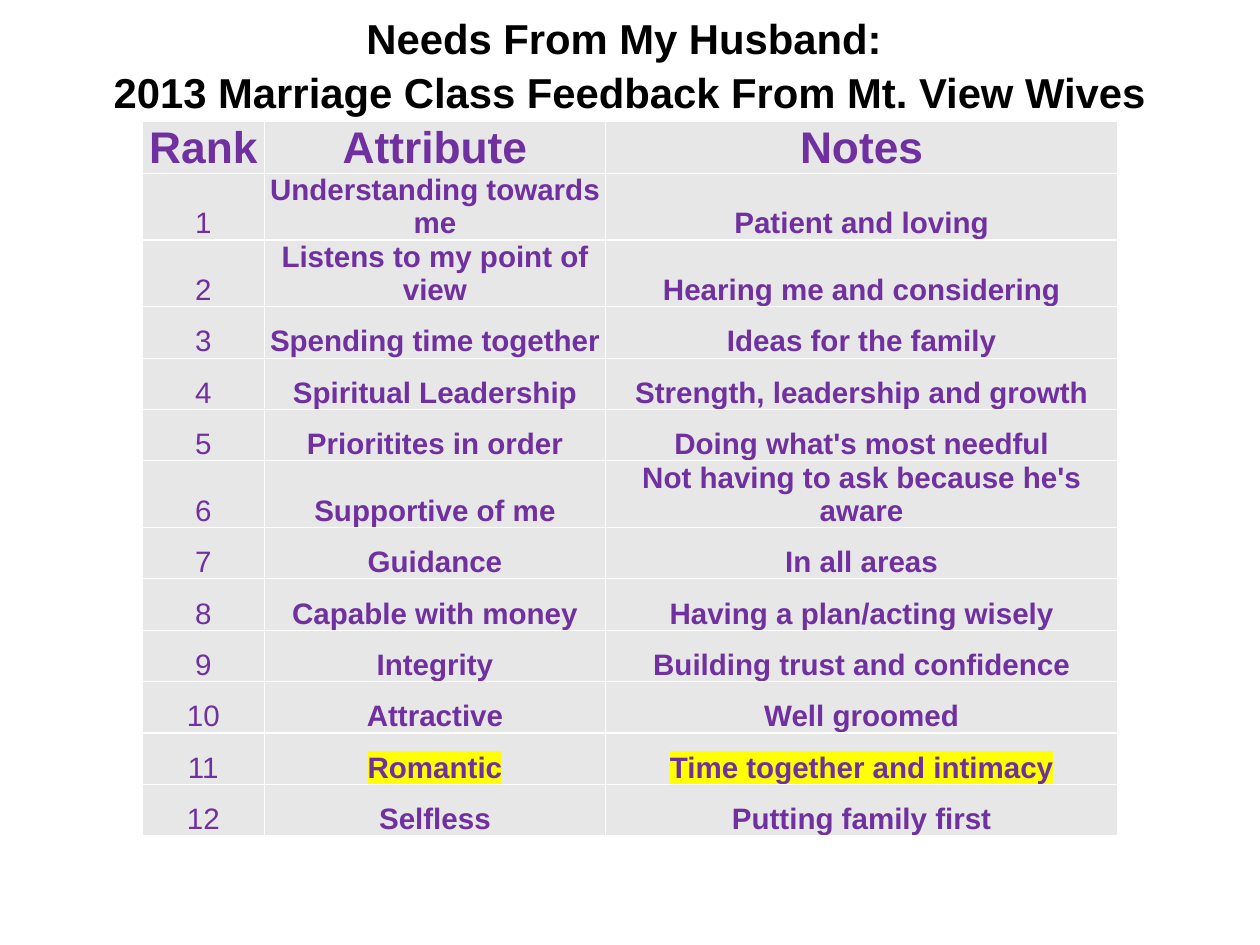
from dataclasses import dataclass

from lxml import etree
from pptx import Presentation
from pptx.dml.color import RGBColor
from pptx.enum.text import MSO_ANCHOR, PP_ALIGN
from pptx.oxml.ns import qn
from pptx.util import Inches, Pt

CENTER = PP_ALIGN.CENTER
MIDDLE = MSO_ANCHOR.MIDDLE
BOTTOM = MSO_ANCHOR.BOTTOM


@dataclass(frozen=True)
class Theme:
    font: str = "Arial"
    title_color: str = "000000"
    table_color: str = "7030A0"
    cell_fill: str = "E7E7E7"
    border: str = "FFFFFF"
    highlight: str = "FFFF00"
    title_size: int = 34
    header_size: int = 36
    body_size: int = 24
    border_width: int = 1
    title_spacing: float = 1.06


THEME = Theme()
SLIDE_WIDTH, SLIDE_HEIGHT = Inches(14.22), Inches(10.67)

# Left, top, width and height as shares of the slide
TITLE_BOX = (0.06, 0.007, 0.88, 0.12)
TABLE_BOX = (0.113, 0.129, 0.774, 0.707)
COLUMN_SHARES = (0.125, 0.35, 0.525)

TITLE_LINES = (
    "Needs From My Husband: ",
    "2013 Marriage Class Feedback From Mt. View Wives",
)
HEADINGS = ("Rank", "Attribute", "Notes")
NEEDS = (
    ("Understanding towards me", "Patient and loving"),
    ("Listens to my point of view", "Hearing me and considering"),
    ("Spending time together", "Ideas for the family"),
    ("Spiritual Leadership", "Strength, leadership and growth"),
    ("Prioritites in order", "Doing what's most needful"),
    ("Supportive of me", "Not having to ask because he's aware"),
    ("Guidance", "In all areas"),
    ("Capable with money", "Having a plan/acting wisely"),
    ("Integrity", "Building trust and confidence"),
    ("Attractive", "Well groomed"),
    ("Romantic", "Time together and intimacy"),
    ("Selfless", "Putting family first"),
)
HIGHLIGHTED_RANK = 11


def slide_box(shares):
    left, top, width, height = shares
    return (
        round(left * SLIDE_WIDTH),
        round(top * SLIDE_HEIGHT),
        round(width * SLIDE_WIDTH),
        round(height * SLIDE_HEIGHT),
    )


def add_run(paragraph, text, size, color, bold=True):
    run = paragraph.add_run()
    run.text = text
    run.font.size = Pt(size)
    run.font.bold = bold
    run.font.name = THEME.font
    run.font.color.rgb = RGBColor.from_string(color)
    return run


def highlight(run):
    """Put a marker colour behind the run; it must follow the text fill."""
    marker = etree.Element(qn("a:highlight"))
    etree.SubElement(marker, qn("a:srgbClr"), val=THEME.highlight)
    run.font.fill  # the text fill is already present
    run._r.rPr.find(qn("a:solidFill")).addnext(marker)


def add_borders(cell):
    """Draw all four cell edges; call before the fill is set."""
    properties = cell._tc.get_or_add_tcPr()
    for edge in ("lnL", "lnR", "lnT", "lnB"):
        line = etree.SubElement(
            properties, qn(f"a:{edge}"), w=str(Pt(THEME.border_width))
        )
        fill = etree.SubElement(line, qn("a:solidFill"))
        etree.SubElement(fill, qn("a:srgbClr"), val=THEME.border)


def place_title(title, box):
    title.left, title.top, title.width, title.height = box
    frame = title.text_frame
    frame.word_wrap = True
    frame.vertical_anchor = MIDDLE
    frame.margin_left = frame.margin_right = 0
    frame.margin_top = frame.margin_bottom = 0
    paragraph = frame.paragraphs[0]
    paragraph.alignment = CENTER
    paragraph.line_spacing = THEME.title_spacing
    for index, line in enumerate(TITLE_LINES):
        if index:
            paragraph.add_line_break()
            line_break = paragraph._p.find(qn("a:br"))
            etree.SubElement(
                line_break, qn("a:rPr"), sz=str(THEME.title_size * 100)
            )
        add_run(paragraph, line, THEME.title_size, THEME.title_color)


def fill_cell(cell, text, size, bold):
    add_borders(cell)
    cell.fill.solid()
    cell.fill.fore_color.rgb = RGBColor.from_string(THEME.cell_fill)
    cell.vertical_anchor = BOTTOM
    cell.margin_left = cell.margin_right = cell.margin_top = Inches(0.01)
    cell.margin_bottom = 0
    paragraph = cell.text_frame.paragraphs[0]
    paragraph.alignment = CENTER
    return add_run(paragraph, text, size, THEME.table_color, bold)


def add_needs_table(slide, box):
    row_count = len(NEEDS) + 1
    table = slide.shapes.add_table(row_count, len(HEADINGS), *box).table
    table.first_row = False
    table.horz_banding = False
    for column, share in zip(table.columns, COLUMN_SHARES):
        column.width = round(box[2] * share)
    for row in table.rows:
        row.height = box[3] // row_count

    for column, heading in enumerate(HEADINGS):
        fill_cell(table.cell(0, column), heading, THEME.header_size, True)
    for rank, need in enumerate(NEEDS, start=1):
        for column, text in enumerate((str(rank), *need)):
            is_wording = column > 0
            run = fill_cell(
                table.cell(rank, column), text, THEME.body_size, is_wording
            )
            if is_wording and rank == HIGHLIGHTED_RANK:
                highlight(run)


def main():
    deck = Presentation()
    deck.slide_width, deck.slide_height = SLIDE_WIDTH, SLIDE_HEIGHT
    title_only = deck.slide_layouts.get_by_name("Title Only")
    slide = deck.slides.add_slide(title_only)
    place_title(slide.shapes.title, slide_box(TITLE_BOX))
    add_needs_table(slide, slide_box(TABLE_BOX))
    deck.save("out.pptx")


if __name__ == "__main__":
    main()
